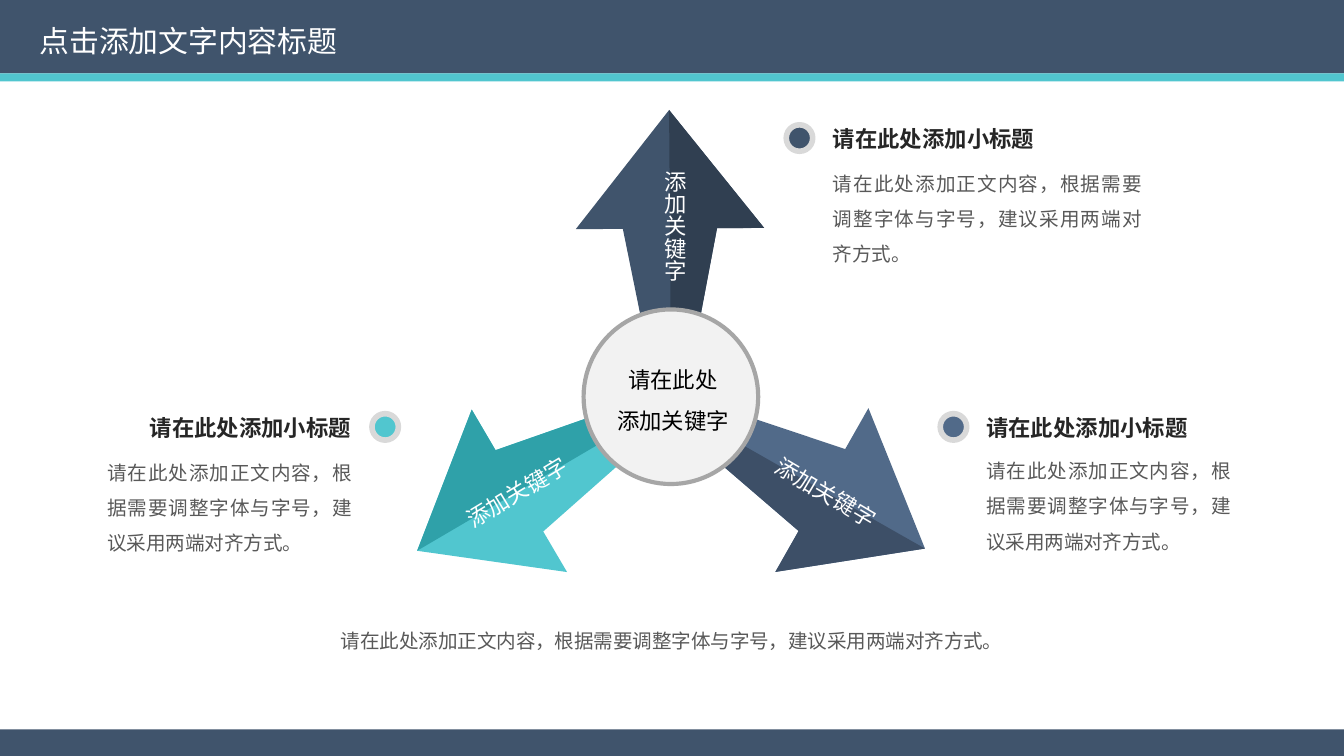
import math
from dataclasses import dataclass

import pptx
import pptx.dml.color
import pptx.enum.shapes
import pptx.enum.text
import pptx.oxml
import pptx.util
from pptx.dml.color import RGBColor
from pptx.util import Cm

NAVY = RGBColor(0x40, 0x54, 0x6C)
NAVY_DARK = RGBColor(0x30, 0x3F, 0x51)
TEAL = RGBColor(0x51, 0xC6, 0xCF)
TEAL_DARK = RGBColor(0x2F, 0xA1, 0xA9)
SLATE = RGBColor(0x51, 0x6A, 0x89)
SLATE_DARK = RGBColor(0x3D, 0x4F, 0x67)
HUB_FILL = RGBColor(0xF2, 0xF2, 0xF2)
HUB_LINE = RGBColor(0xA6, 0xA6, 0xA6)
RING = RGBColor(0xD9, 0xD9, 0xD9)
WHITE = RGBColor(0xFF, 0xFF, 0xFF)
BLACK = RGBColor(0, 0, 0)
HEADING = RGBColor(0x26, 0x26, 0x26)
BODY = RGBColor(0x59, 0x59, 0x59)

FONT = "Noto Sans CJK SC"
KEYWORD = "添加关键字"
SUBTITLE = "请在此处添加小标题"
BODY_TEXT = "请在此处添加正文内容，根据需要调整字体与字号，建议采用两端对齐方式。"

ALIGN = pptx.enum.text.PP_ALIGN
PRESET = pptx.enum.shapes.MSO_SHAPE

# Arrow pointing up, in hundredths of a centimetre
ARROW_WIDTH, ARROW_HEIGHT = 3.56, 6.78
ARROW_OUTLINE = [(178, 0), (0, 224), (89, 224), (178, 678), (267, 224), (356, 224)]
HALF_OUTLINE = [(0, 0), (0, 678), (89, 224), (178, 224)]
PIVOT_X, PIVOT_Y, ARROW_RADIUS = 12.67, 7.62, 2.15
ARROW_TILT = -0.4


@dataclass(frozen=True)
class Box:
    """Left, top, width and height in centimetres."""
    left: float
    top: float
    width: float
    height: float

    def lengths(self) -> list:
        return [Cm(value) for value in (self.left, self.top, self.width, self.height)]


@dataclass(frozen=True)
class Arrow:
    angle: float
    fill: RGBColor
    half_fill: RGBColor
    label: Box
    label_rotation: float = 0
    vertical: bool = False


@dataclass(frozen=True)
class Note:
    marker_left: float
    marker_top: float
    color: RGBColor
    heading: Box
    body: Box
    heading_align: ALIGN = ALIGN.LEFT


ARROWS = [
    Arrow(0, NAVY, NAVY_DARK, Box(12.12, 2.97, 1.02, 2.39), vertical=True),
    Arrow(240, TEAL, TEAL_DARK, Box(8.46, 8.92, 2.64, 0.76), 328.8),
    Arrow(120, SLATE, SLATE_DARK, Box(14.3, 8.94, 2.64, 0.76), 30.7),
]
NOTES = [
    Note(14.86, 2.36, NAVY, Box(15.49, 2.24, 5.59, 0.76), Box(15.49, 2.9, 6.35, 2.29)),
    Note(17.77, 7.82, SLATE, Box(18.39, 7.7, 5.13, 0.76), Box(18.39, 8.33, 5.13, 2.29)),
    Note(7.03, 7.82, TEAL, Box(1.78, 7.7, 5.11, 0.76), Box(1.78, 8.36, 5.13, 2.29),
         ALIGN.RIGHT),
]


def paint(shape, fill: RGBColor, line: RGBColor | None = None, weight: float = 0) -> None:
    shape.shadow.inherit = False
    shape.fill.solid()
    shape.fill.fore_color.rgb = fill
    if line is None:
        shape.line.fill.background()
    else:
        shape.line.color.rgb = line
        shape.line.width = pptx.util.Pt(weight)


def add_preset(slide, preset, box: Box, fill: RGBColor, line=None, weight: float = 0) -> None:
    paint(slide.shapes.add_shape(preset, *box.lengths()), fill, line, weight)


def add_text(slide, box: Box, lines: list[str], size: float, color: RGBColor,
             align=ALIGN.LEFT, spacing: float = 1, bold: bool = False, wrap: bool = True):
    shape = slide.shapes.add_textbox(*box.lengths())
    frame = shape.text_frame
    frame.word_wrap = wrap
    frame.auto_size = pptx.enum.text.MSO_AUTO_SIZE.SHAPE_TO_FIT_TEXT
    font_format = {"size": pptx.util.Pt(size), "name": FONT, "bold": bold}
    for index, line in enumerate(lines):
        paragraph = frame.paragraphs[0] if index == 0 else frame.add_paragraph()
        paragraph.alignment = align
        paragraph.line_spacing = spacing
        run = paragraph.add_run()
        run.text = line
        for name, value in font_format.items():
            setattr(run.font, name, value)
        run.font.color.rgb = color
        east_asian = pptx.oxml.parse_xml(
            '<a:ea xmlns:a="http://schemas.openxmlformats.org/drawingml/2006/main" '
            f'typeface="{FONT}"/>')
        run.font._element.append(east_asian)
    return shape


def add_outline(slide, points: list, center_x: float, center_y: float, width: float,
                rotation: float, fill: RGBColor) -> None:
    """Draw a closed outline centred on a point, then turn it."""
    builder = slide.shapes.build_freeform(*points[0], scale=float(Cm(0.01)))
    builder.add_line_segments(points[1:], close=True)
    shape = builder.convert_to_shape(Cm(center_x - width / 2),
                                     Cm(center_y - ARROW_HEIGHT / 2))
    shape.rotation = rotation
    paint(shape, fill)


def add_arrow(slide, arrow: Arrow) -> None:
    angle = math.radians(arrow.angle)
    center_x = PIVOT_X + ARROW_RADIUS * math.sin(angle)
    center_y = PIVOT_Y - ARROW_RADIUS * math.cos(angle)
    rotation = (arrow.angle + ARROW_TILT) % 360
    turn = math.radians(rotation)
    half_width = ARROW_WIDTH / 2
    offset = half_width / 2
    add_outline(slide, ARROW_OUTLINE, center_x, center_y, ARROW_WIDTH, rotation, arrow.fill)
    add_outline(slide, HALF_OUTLINE, center_x + offset * math.cos(turn),
                center_y + offset * math.sin(turn), half_width, rotation, arrow.half_fill)
    label = add_text(slide, arrow.label, [KEYWORD], 12, WHITE, wrap=False)
    label.rotation = arrow.label_rotation
    if arrow.vertical:
        label.text_frame._txBody.bodyPr.set("vert", "eaVert")


def add_note(slide, note: Note) -> None:
    marker = Box(note.marker_left, note.marker_top, 0.5, 0.5)
    add_preset(slide, PRESET.OVAL, marker, note.color, RING, 3)
    add_text(slide, note.heading, [SUBTITLE], 12, HEADING, note.heading_align, bold=True)
    add_text(slide, note.body, [BODY_TEXT], 10.5, BODY, ALIGN.JUSTIFY, 1.5)


def main() -> None:
    presentation = pptx.Presentation()
    presentation.slide_width = Cm(25.4)
    presentation.slide_height = Cm(14.29)
    slide = presentation.slides.add_slide(presentation.slide_layouts[6])

    add_preset(slide, PRESET.RECTANGLE, Box(0, 0, 25.4, 1.39), NAVY)
    add_preset(slide, PRESET.RECTANGLE, Box(0, 1.39, 25.4, 0.15), TEAL)
    add_preset(slide, PRESET.RECTANGLE, Box(0, 13.79, 25.4, 0.5), NAVY)

    for arrow in ARROWS:
        add_arrow(slide, arrow)
    add_preset(slide, PRESET.OVAL, Box(11.03, 5.85, 3.3, 3.3), HUB_FILL, HUB_LINE, 2.25)
    add_text(slide, Box(11.4, 6.55, 2.64, 1.8), ["请在此处", KEYWORD], 12, BLACK,
             ALIGN.CENTER, 1.5, wrap=False)
    for note in NOTES:
        add_note(slide, note)

    add_text(slide, Box(4.83, 11.76, 15.75, 0.71), [BODY_TEXT], 10.5, BODY, ALIGN.CENTER)
    add_text(slide, Box(0.5, 0.3, 6.22, 0.94), ["点击添加文字内容标题"], 16, WHITE, wrap=False)
    presentation.save("out.pptx")


if __name__ == "__main__":
    main()
